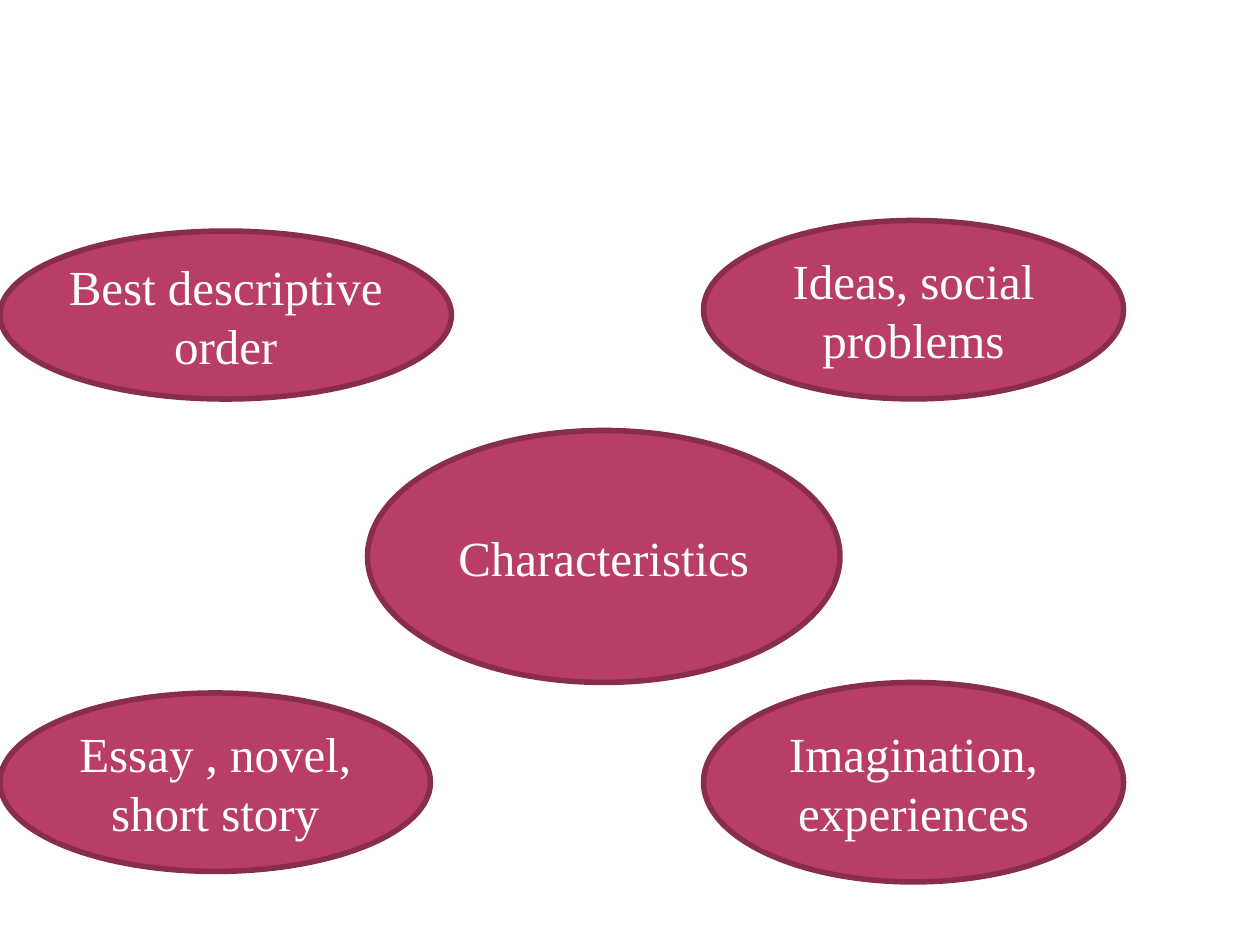
"""Builds a slide with a central idea and four characteristics around it."""
from pptx import Presentation
from pptx.dml.color import RGBColor
from pptx.enum.shapes import MSO_SHAPE
from pptx.enum.text import MSO_ANCHOR, PP_ALIGN
from pptx.util import Inches, Pt

COLORS = {"fill": "B83D68", "outline": "882D4D", "text": "FFFFFF"}
SLIDE_WIDTH, SLIDE_HEIGHT = Inches(10), Inches(7.5)
COLUMNS, ROWS = 120, 90
LEFT, RIGHT = 0, 67

# text, column, row, columns wide, rows high
IDEAS = [
    ("Characteristics", 35, 41, 45, 24),
    ("Best descriptive order", LEFT, 22, 43, 16),
    ("Ideas, social problems", RIGHT, 21, 40, 17),
    ("Essay , novel, short story", LEFT, 66, 41, 17),
    ("Imagination, experiences", RIGHT, 65, 40, 19),
]


def write_text(frame, text, *, font="Times New Roman", size=28, color="text", side_margin=0):
    frame.word_wrap = True
    frame.vertical_anchor = MSO_ANCHOR.MIDDLE
    frame.margin_left = frame.margin_right = Inches(side_margin)
    paragraph = frame.paragraphs[0]
    paragraph.alignment = PP_ALIGN.CENTER
    run = paragraph.add_run()
    run.text = text
    run.font.name = font
    run.font.size = Pt(size)
    run.font.color.rgb = RGBColor.from_string(COLORS[color])


def add_idea(slide, text, column, row, wide, high):
    cell_width, cell_height = SLIDE_WIDTH / COLUMNS, SLIDE_HEIGHT / ROWS
    idea = slide.shapes.add_shape(
        MSO_SHAPE.OVAL,
        int(column * cell_width), int(row * cell_height),
        int(wide * cell_width), int(high * cell_height),
    )
    idea.shadow.inherit = False
    idea.fill.solid()
    idea.fill.fore_color.rgb = RGBColor.from_string(COLORS["fill"])
    idea.line.color.rgb = RGBColor.from_string(COLORS["outline"])
    idea.line.width = Pt(3.15)
    write_text(idea.text_frame, text)


def main():
    deck = Presentation()
    deck.slide_width, deck.slide_height = SLIDE_WIDTH, SLIDE_HEIGHT
    slide = deck.slides.add_slide(deck.slide_layouts[6])
    for idea in IDEAS:
        add_idea(slide, *idea)
    deck.save("out.pptx")


if __name__ == "__main__":
    main()
